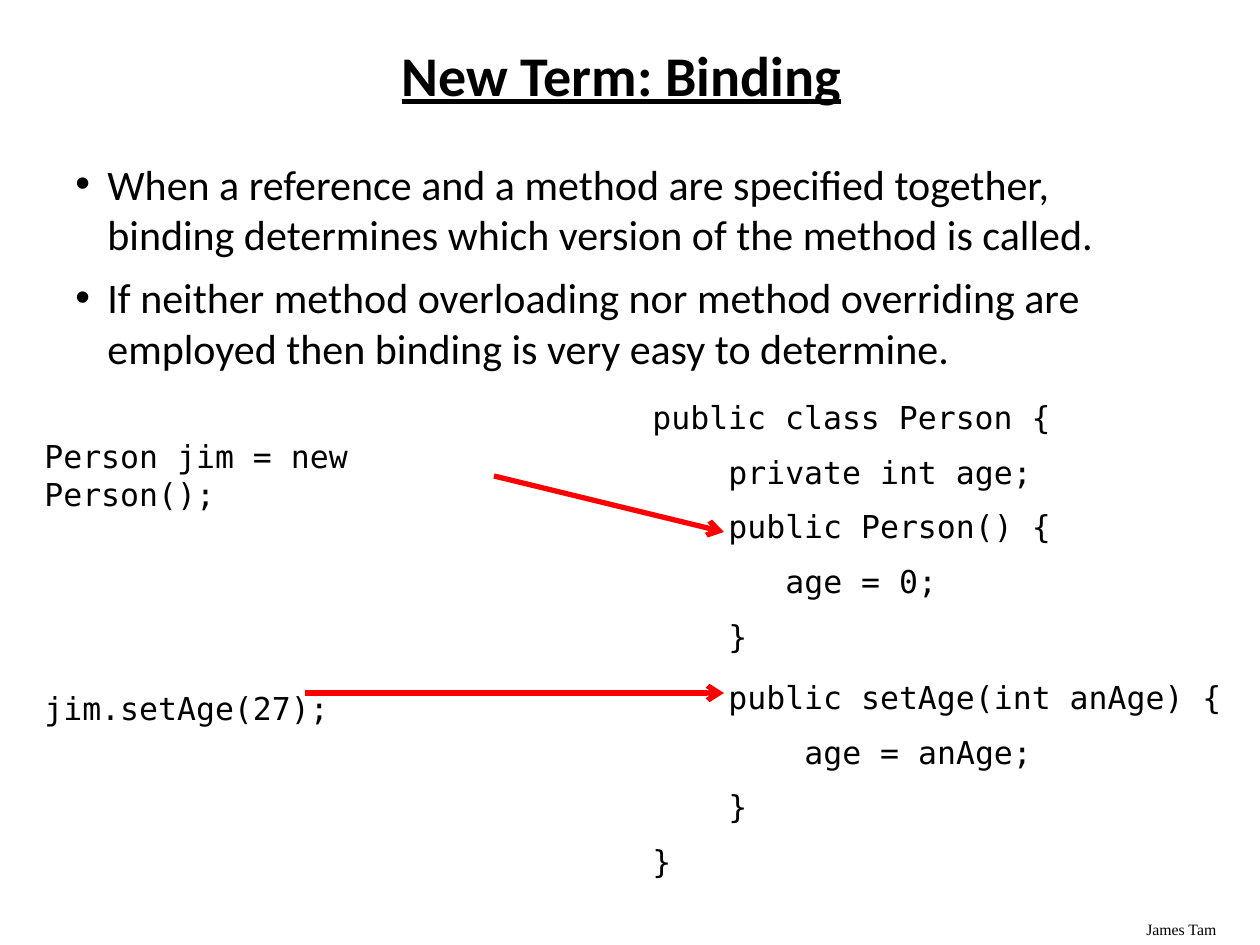
from pptx import Presentation
from pptx import util as u
from pptx.dml.color import RGBColor
from pptx.enum import shapes, text
from pptx.oxml.ns import qn
from lxml import etree

BLACK = RGBColor(0, 0, 0)
RED = RGBColor(255, 0, 0)
SANS, MONO, SERIF = "Calibri", "DejaVu Sans Mono", "Times New Roman"
CHAR = 19  # px, width of one code character

TITLE = "New Term: Binding"
AUTHOR = "James Tam"
POINTS = [
    "When a reference and a method are specified together, "
    "binding determines which version of the method is called.",
    "If neither method overloading nor method overriding are "
    "employed then binding is very easy to determine.",
]
# (left, top, width, height), [(indent in characters, line of code)]
CODE = [
    ((32, 431, 494, 86), [(0, "Person jim = new Person();")]),
    ((32, 683, 494, 49), [(0, "jim.setAge(27);")]),
    ((640, 392, 620, 278), [
        (0, "public class Person {"),
        (4, "private int age;"),
        (4, "public Person() {"),
        (7, "age = 0;"),
        (4, "}"),
    ]),
    ((640, 672, 620, 222), [
        (4, "public setAge(int anAge) {"),
        (8, "age = anAge;"),
        (4, "}"),
        (0, "}"),
    ]),
]
ARROWS = [(494, 476, 724, 532), (305, 693, 724, 693)]


def px(n):
    return u.Emu(round(n * 914400 / 126))


def add_text(s, box, lines, font, size, space=0):
    tf = s.shapes.add_textbox(*map(px, box)).text_frame
    tf.word_wrap = True
    tf.text = "\n".join(lines)
    for p in tf.paragraphs:
        p.space_before = u.Pt(space)
        f = p.runs[0].font
        f.name, f.size, f.color.rgb = font, u.Pt(size), BLACK
    return tf


def indent(p, left, first=0):
    pPr = p._p.get_or_add_pPr()
    pPr.set("marL", str(px(left)))
    pPr.set("indent", str(px(first)))
    return pPr


def add_arrow(s, ends):
    c = s.shapes.add_connector(shapes.MSO_CONNECTOR.STRAIGHT, *map(px, ends))
    c.line.color.rgb = RED
    c.line.width = u.Pt(3)
    etree.SubElement(c.line._get_or_add_ln(), qn("a:tailEnd"), type="arrow")
    etree.SubElement(c._element.spPr, qn("a:effectLst"))


def main():
    prs = Presentation()
    prs.slide_width, prs.slide_height = px(1260), px(945)
    s = prs.slides.add_slide(prs.slide_layouts[6])

    add_text(s, (1134, 914, 126, 31), [AUTHOR], SERIF, 9)

    tf = add_text(s, (59, 42, 1125, 72), [TITLE], SANS, 32)
    tf.vertical_anchor = text.MSO_ANCHOR.MIDDLE
    p = tf.paragraphs[0]
    p.alignment = text.PP_ALIGN.CENTER
    p.line_spacing = 0.9
    p.runs[0].font.bold = p.runs[0].font.underline = True

    tf = add_text(s, (63, 152, 1126, 740), POINTS, SANS, 24, 7.2)
    for p in tf.paragraphs:
        pPr = indent(p, 32, -32)
        etree.SubElement(pPr, qn("a:buFont"), typeface="Arial")
        etree.SubElement(pPr, qn("a:buChar"), char="•")

    for box, lines in CODE:
        tf = add_text(s, box, [line for _, line in lines], MONO, 18, 9.6)
        for p, (chars, _) in zip(tf.paragraphs, lines):
            indent(p, chars * CHAR)

    for ends in ARROWS:
        add_arrow(s, ends)

    prs.save("out.pptx")


if __name__ == "__main__":
    main()
